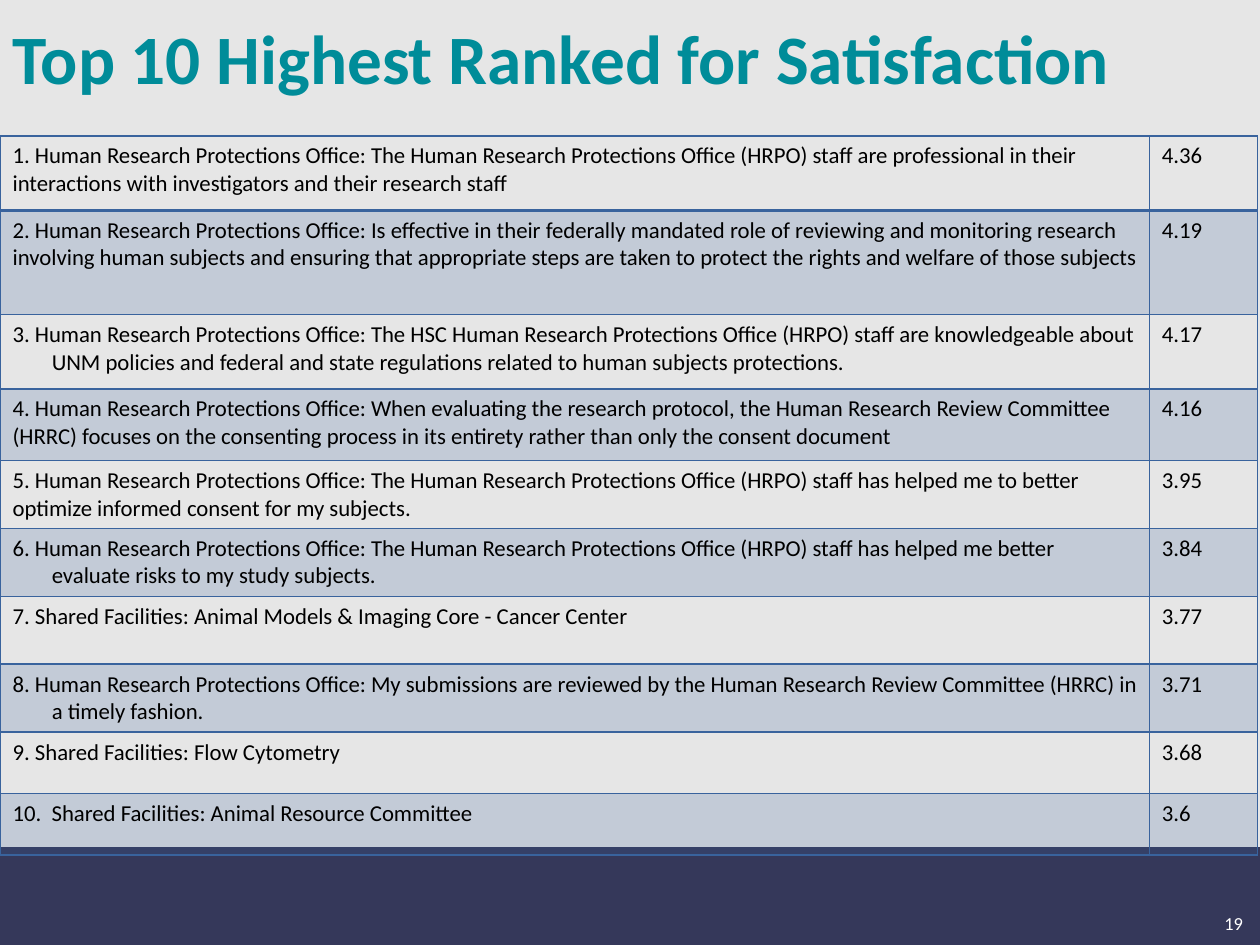
from lxml import etree
from pptx import Presentation
from pptx.dml.color import RGBColor
from pptx.enum.shapes import MSO_SHAPE
from pptx.enum.text import MSO_ANCHOR, PP_ALIGN
from pptx.oxml.ns import qn
from pptx.util import Cm, Pt

RECT = MSO_SHAPE.RECTANGLE
MIDDLE, TOP = MSO_ANCHOR.MIDDLE, MSO_ANCHOR.TOP
LEFT, CENTER = PP_ALIGN.LEFT, PP_ALIGN.CENTER

COLORS = {
    "back": "E6E6E6",
    "band": "35385A",
    "title": "008C99",
    "text": "000000",
    "page": "FFFFFF",
    "grid": "39639D",
}
FONT = "Calibri"
HANG = Cm(0.79)
HRPO = "Human Research Protections Office: "
CORE = "Shared Facilities: "

# Item, score, row height in cm, hanging indent
ROWS = [
    ("1. " + HRPO + "The Human Research Protections Office (HRPO) staff are professional "
     "in their interactions with investigators and their research staff", "4.36", 1.5, False),
    ("2. " + HRPO + "Is effective in their federally mandated role of reviewing and "
     "monitoring research involving human subjects and ensuring that appropriate steps are "
     "taken to protect the rights and welfare of those subjects", "4.19", 2.1, False),
    ("3. " + HRPO + "The HSC Human Research Protections Office (HRPO) staff are "
     "knowledgeable about UNM policies and federal and state regulations related to human "
     "subjects protections.", "4.17", 1.5, True),
    ("4. " + HRPO + "When evaluating the research protocol, the Human Research Review "
     "Committee (HRRC) focuses on the consenting process in its entirety rather than only "
     "the consent document", "4.16", 1.44, False),
    ("5. " + HRPO + "The Human Research Protections Office (HRPO) staff has helped me to "
     "better optimize informed consent for my subjects.", "3.95", 1.37, False),
    ("6. " + HRPO + "The Human Research Protections Office (HRPO) staff has helped me "
     "better evaluate risks to my study subjects.", "3.84", 1.37, True),
    ("7. " + CORE + "Animal Models & Imaging Core - Cancer Center", "3.77", 1.37, False),
    ("8. " + HRPO + "My submissions are reviewed by the Human Research Review Committee "
     "(HRRC) in a timely fashion.", "3.71", 1.37, True),
    ("9. " + CORE + "Flow Cytometry", "3.68", 1.24, True),
    ("10.  " + CORE + "Animal Resource Committee", "3.6", 1.24, False),
]


def color(name):
    return RGBColor.from_string(COLORS[name])


def write(frame, text, size=13, tint="text", bold=False, align=LEFT, anchor=TOP, hang=False):
    frame.word_wrap = True
    frame.vertical_anchor = anchor
    para = frame.paragraphs[0]
    para.alignment = align
    if hang:
        props = para._p.get_or_add_pPr()
        props.set("marL", str(HANG))
        props.set("indent", str(-HANG))
    run = para.add_run()
    run.text = text
    run.font.name = FONT
    run.font.size = Pt(size)
    run.font.bold = bold
    run.font.color.rgb = color(tint)


def add_fill(node, name, alpha=None):
    """Append a solid fill, with opacity in percent."""
    fill = etree.SubElement(node, qn("a:solidFill"))
    tone = etree.SubElement(fill, qn("a:srgbClr"), val=COLORS[name])
    if alpha:
        etree.SubElement(tone, qn("a:alpha"), val=str(alpha * 1000))


def style_cell(cell, shade, bottom=1):
    props = cell._tc.get_or_add_tcPr()
    for side, width in (("L", 1), ("R", 1), ("T", 1), ("B", bottom)):
        line = etree.SubElement(props, qn("a:ln" + side), w=str(Pt(width)))
        add_fill(line, "grid")
    if shade:
        add_fill(props, "grid", 20)
    else:
        cell.fill.background()


def add_title(slide, left, top, width, height):
    title = slide.shapes.title
    title.left, title.top, title.width, title.height = left, top, width, height
    write(title.text_frame, "Top 10 Highest Ranked for Satisfaction",
          size=39.6, tint="title", bold=True, anchor=MIDDLE)


def add_footer(slide, left, top, width, height):
    band = slide.shapes.add_shape(RECT, left, top, width, height)
    band.shadow.inherit = False
    band.fill.solid()
    band.fill.fore_color.rgb = color("band")
    band.line.color.rgb = color("band")
    band.line.width = Pt(2)
    wide, high = Cm(1.06), Cm(0.88)
    page = slide.shapes.add_textbox(left + width - wide, top + height - high, wide, high)
    write(page.text_frame, "19", size=10.5, tint="page", align=CENTER, anchor=MIDDLE)


def add_ranks(slide, left, top, width):
    height = Cm(sum(row[2] for row in ROWS))
    table = slide.shapes.add_table(len(ROWS), 2, left, top, width, height).table
    table.first_row = table.horz_banding = False
    score_w = Cm(2.18)
    table.columns[0].width = width - score_w
    table.columns[1].width = score_w
    for i, (item, score, high, hang) in enumerate(ROWS):
        table.rows[i].height = Cm(high)
        for j, text in enumerate((item, score)):
            cell = table.cell(i, j)
            write(cell.text_frame, text, hang=hang and j == 0)
            style_cell(cell, shade=i % 2 == 1, bottom=1 if i else 2)


def main():
    deck = Presentation()
    deck.slide_width, deck.slide_height = Cm(25.4), Cm(19.05)
    slide = deck.slides.add_slide(deck.slide_layouts[5])
    back = slide.background.fill
    back.solid()
    back.fore_color.rgb = color("back")
    add_title(slide, 0, 0, Cm(25.35), Cm(2.29))
    add_footer(slide, 0, Cm(17.12), Cm(25.4), Cm(1.93))
    add_ranks(slide, 0, Cm(2.74), Cm(25.35))
    deck.save("out.pptx")


if __name__ == "__main__":
    main()
